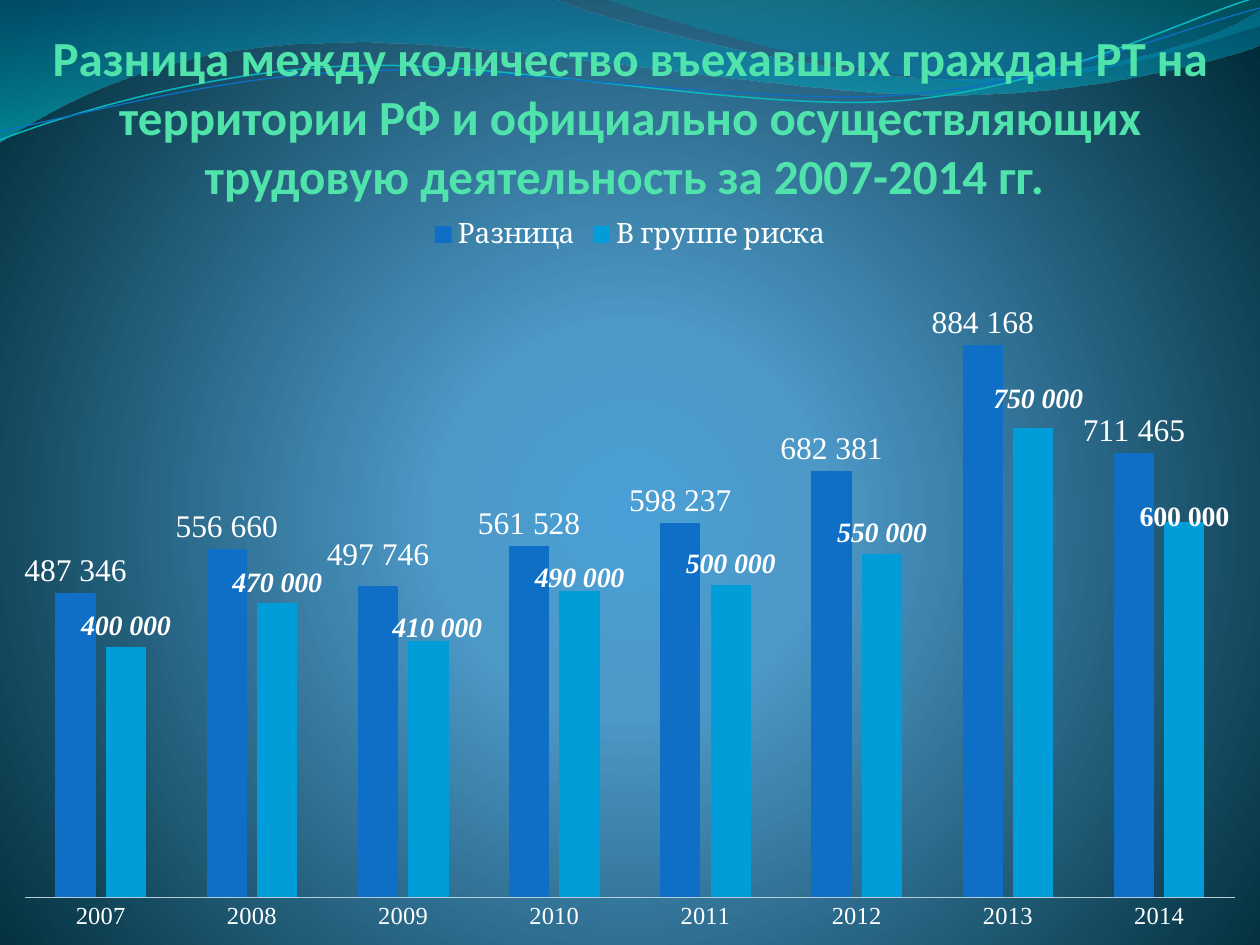
import math

import pptx
import pptx.util
import pptx.chart.data
import pptx.dml.color
import pptx.enum.chart
import pptx.enum.text
import pptx.oxml
import pptx.oxml.ns

PX = 914400 / 126
NS = pptx.oxml.ns.nsdecls("a", "c")
WHITE = "FFFFFF"
BLUE = "0F6FC6"
TIMES = "Times New Roman"
TILT = 357.3

# Points in px: a start, then straight parts (2 numbers) and curves (6 numbers)
TOP_WAVE = [(0, 0), (554, -1), (600, 21, 837, 79, 955, 79), (1075, 79, 1207, 47, 1260, 11),
            (1261, 45), (1239, 55, 1096, 96, 940, 95), (784, 95, 481, 35, 324, 43),
            (163, 45, 58, 105, -1, 142), (0, 0)]
SIDE_WAVE = [(604, -1), (641, 14, 859, 78, 969, 82), (1079, 87, 1211, 40, 1260, 26),
             (1260, 0), (604, -1)]
TEAL_LINE = [(0, 140), (60, 117, 199, 72, 349, 66), (498, 59, 747, 112, 898, 101),
             (1050, 89, 1182, 19, 1258, -3)]
BLUE_LINE = [(0, 131), (59, 121, 207, 77, 357, 71), (508, 64, 752, 106, 903, 95),
             (1053, 84, 1187, 26, 1260, 8)]

YEARS = [str(year) for year in range(2007, 2015)]
ROWS = [
    ("Разница", BLUE, dict(size=18, bold=False, italic=False),
     [487346, 556660, 497746, 561528, 598237, 682381, 884168, 711465]),
    ("В группе риска", "009DD9", dict(size=16, bold=True, italic=True),
     [400000, 470000, 410000, 490000, 500000, 550000, 750000, 600000]),
]
# Labels moved off their usual place: (row, point) -> px right, px down
SHIFTS = {(0, 2): (0, -9), (1, 2): (9, 8), (1, 3): (0, 8),
          (1, 6): (5, -9), (1, 7): (0, 16)}


def px(num):
    return round(num * PX)


def rgb(code):
    return pptx.dml.color.RGBColor.from_string(code)


def style(font, **values):
    for name, value in values.items():
        if name == "color":
            font.color.rgb = rgb(value)
        else:
            setattr(font, name, pptx.util.Pt(value) if name == "size" else value)


def grad(stops, shade):
    marks = ""
    for pos, code, *alpha in stops:
        clear = "".join(f'<a:alpha val="{part * 1000}"/>' for part in alpha)
        marks += f'<a:gs pos="{pos * 1000}"><a:srgbClr val="{code}">{clear}</a:srgbClr></a:gs>'
    return pptx.oxml.parse_xml(
        f'<a:gradFill {NS} rotWithShape="1"><a:gsLst>{marks}</a:gsLst>{shade}</a:gradFill>')


def swap_fill(parent, new):
    old = parent.find(pptx.oxml.ns.qn("a:solidFill"))
    parent.replace(old, new)


def turn(pts, angle):
    """Turn points about the middle of the wave lines."""
    mid_x, mid_y = 629, 73
    cos, sin = math.cos(math.radians(angle)), math.sin(math.radians(angle))
    return [(mid_x + (x - mid_x) * cos - (y - mid_y) * sin,
             mid_y + (x - mid_x) * sin + (y - mid_y) * cos) for x, y in pts]


def bend(shape, parts):
    """Join the straight steps of each curve into one cubic curve."""
    tag = pptx.oxml.ns.qn
    steps = list(shape._element.iter(tag("a:lnTo")))
    for part in parts[1:]:
        group, steps = steps[:len(part) // 2], steps[len(part) // 2:]
        if len(group) == 3:
            curve = pptx.oxml.parse_xml(f"<a:cubicBezTo {NS}/>")
            group[0].addprevious(curve)
            for step in group:
                curve.append(step[0])
                step.getparent().remove(step)


def add_wave(slide, parts, stops=None, line=None, width=0):
    pts = [part[i:i + 2] for part in parts for i in range(0, len(part), 2)]
    if line:
        pts = turn(pts, -TILT)
    pts = [(px(x), px(y)) for x, y in pts]
    pen = slide.shapes.build_freeform(*pts[0], scale=1.0)
    pen.add_line_segments(pts[1:], close=bool(stops))
    shape = pen.convert_to_shape()
    bend(shape, parts)
    shape.shadow.inherit = False
    if stops:
        shape.fill.solid()
        swap_fill(shape.fill._xPr, grad(stops, '<a:lin ang="5400000" scaled="1"/>'))
        shape.line.fill.background()
    else:
        shape.rotation = TILT
        shape.fill.background()
        shape.line.color.rgb = rgb(line)
        shape.line.width = pptx.util.Pt(width)


def add_back(slide):
    fill = slide.background.fill
    fill.solid()
    swap_fill(fill._xPr, grad(
        [(0, "4AA0D6"), (25, "4C98C7"), (100, "002C38")],
        '<a:path path="circle"><a:fillToRect l="10000" t="110000" '
        'r="10000" b="100000"/></a:path>'))
    add_wave(slide, TOP_WAVE, [(0, "0074A1", 45), (100, "00C6CF", 55)])
    add_wave(slide, SIDE_WAVE, [(0, "00A1A9", 30), (80, "008BBF", 45)])
    add_wave(slide, TEAL_LINE, line="0AB8BF", width=0.85)
    add_wave(slide, BLUE_LINE, line=BLUE, width=0.75)


def add_title(slide, x, y, w, h):
    frame = slide.shapes.add_textbox(px(x), px(y), px(w), px(h)).text_frame
    look = dict(word_wrap=True, vertical_anchor=pptx.enum.text.MSO_ANCHOR.BOTTOM,
                margin_left=0, margin_right=0, margin_top=0, margin_bottom=0)
    for name, value in look.items():
        setattr(frame, name, value)
    para = frame.paragraphs[0]
    para.alignment = pptx.enum.text.PP_ALIGN.CENTER
    run = para.add_run()
    run.text = ("Разница между количество въехавшых граждан РТ на территории РФ "
                "и официально осуществляющих трудовую деятельность за 2007-2014 гг. ")
    style(run.font, name="Calibri", size=28, bold=True, color="50E3AC")


def set_place(parent, spot, **values):
    """Give a chart part a manual layout as shares of the chart."""
    items = "".join(f'<c:{key} val="{value}"/>' for key, value in values.items())
    old = parent.find(pptx.oxml.ns.qn("c:layout"))
    if old is not None:
        parent.remove(old)
    parent.insert(spot, pptx.oxml.parse_xml(
        f"<c:layout {NS}><c:manualLayout>{items}</c:manualLayout></c:layout>"))


def add_labels(series, row, font, w, h):
    place = pptx.enum.chart.XL_LABEL_POSITION.OUTSIDE_END
    labels = series.data_labels
    look = dict(show_value=True, number_format='##0" "000',
                number_format_is_linked=False, position=place)
    for name, value in look.items():
        setattr(labels, name, value)
    style(labels.font, name=TIMES, color=WHITE, **font)
    for (owner, spot), (right, down) in SHIFTS.items():
        if owner != row:
            continue
        label = series.points[spot].data_label
        run = label.text_frame.paragraphs[0].add_run()
        run.text = f"{series.values[spot]:,.0f}".replace(",", " ")
        style(run.font, name=TIMES, color=WHITE, **font)
        if YEARS[spot] == "2014":
            run.font.italic = False
        label.position = place
        set_place(label._dLbl, 1, x=round(right / w, 4), y=round(down / h, 4))


def add_bars(slide, x, y, w, h):
    data = pptx.chart.data.CategoryChartData()
    data.categories = YEARS
    for name, _, _, values in ROWS:
        data.add_series(name, values)
    chart = slide.shapes.add_chart(
        pptx.enum.chart.XL_CHART_TYPE.COLUMN_CLUSTERED,
        px(x), px(y), px(w), px(h), data).chart
    style(chart.font, name="Cambria", size=10, color=WHITE)
    chart.has_title = False
    # Legend
    chart.has_legend = True
    chart.legend.position = pptx.enum.chart.XL_LEGEND_POSITION.TOP
    chart.legend.include_in_layout = False
    style(chart.legend.font, name="Cambria", size=16, color=WHITE)
    # Axes
    axis = chart.category_axis
    axis.major_tick_mark = pptx.enum.chart.XL_TICK_MARK.NONE
    axis.format.line.color.rgb = rgb("B5CCD9")
    style(axis.tick_labels.font, name=TIMES, size=14, color=WHITE)
    look = dict(visible=False, has_major_gridlines=False,
                minimum_scale=0, maximum_scale=1000000)
    for name, value in look.items():
        setattr(chart.value_axis, name, value)
    # Columns
    plot = chart.plots[0]
    for name, value in dict(gap_width=150, overlap=-25, vary_by_categories=False).items():
        setattr(plot, name, value)
    for row, (series, (_, color, font, _)) in enumerate(zip(plot.series, ROWS)):
        series.format.fill.solid()
        series.format.fill.fore_color.rgb = rgb(color)
        add_labels(series, row, font, w, h)
    set_place(chart._chartSpace.chart.plotArea, 0, layoutTarget="inner",
              xMode="edge", yMode="edge", x=0.02, y=0.092, w=0.96, h=0.844)


def main():
    deck = pptx.Presentation()
    deck.slide_width, deck.slide_height = px(1260), px(945)
    slide = deck.slides.add_slide(deck.slide_layouts[6])
    add_back(slide)
    add_title(slide, 15, 16, 1230, 188)
    add_bars(slide, 0, 204, 1260, 741)
    deck.save("out.pptx")


if __name__ == "__main__":
    main()
